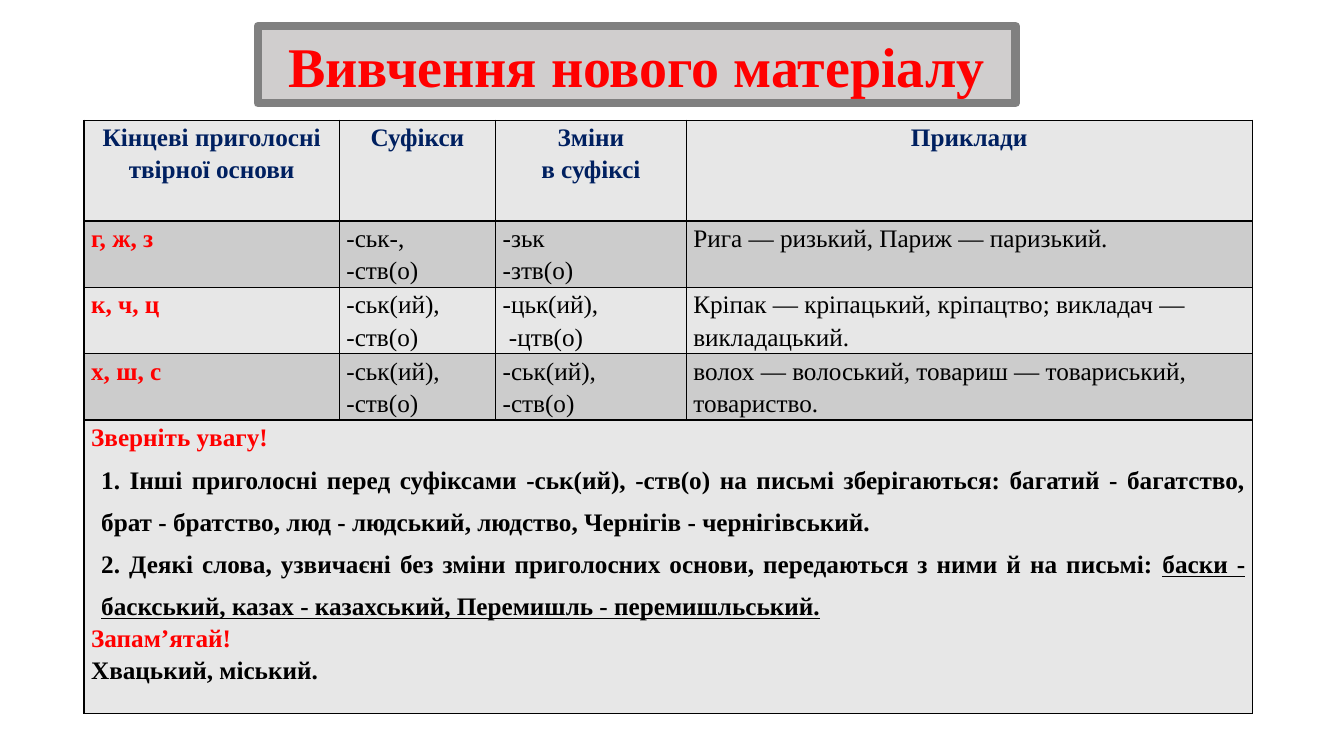
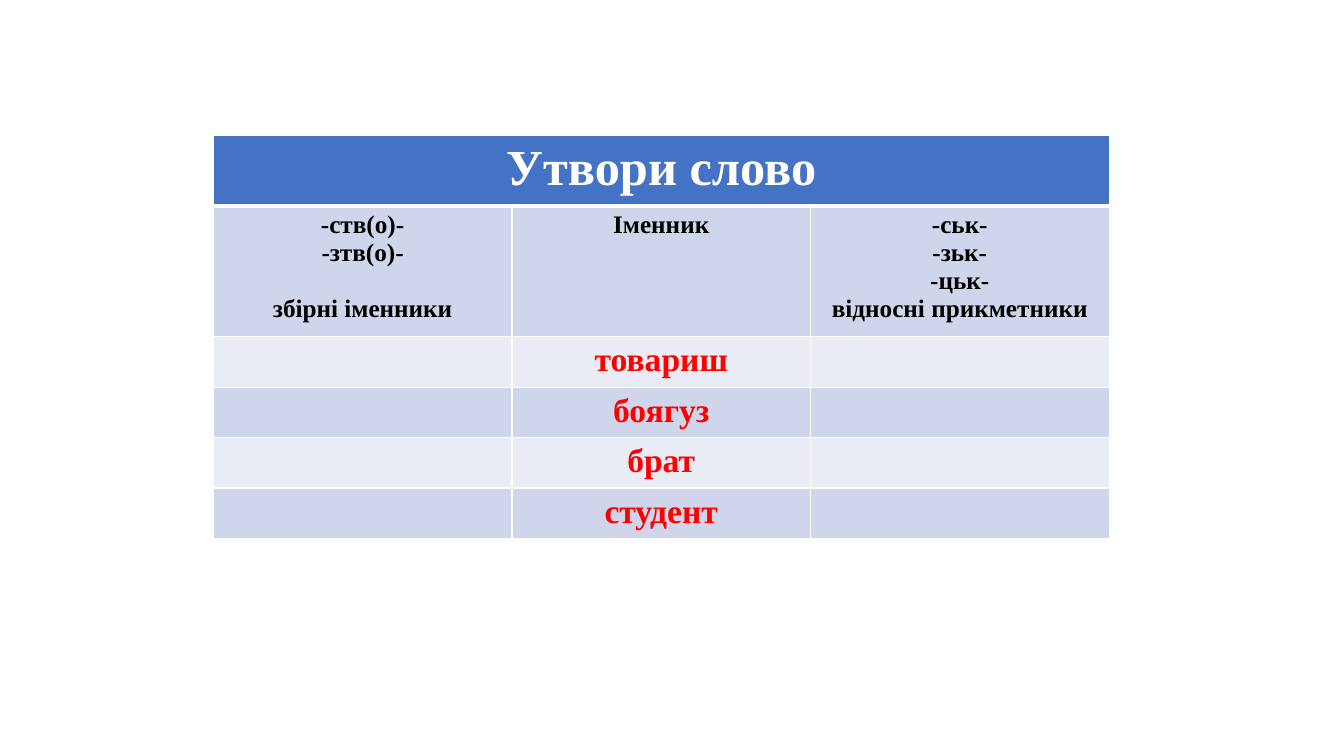
from dataclasses import dataclass, replace
from typing import Optional

from lxml.etree import SubElement
from pptx import Presentation
from pptx.dml.color import RGBColor
from pptx.enum.shapes import MSO_SHAPE as Shape
from pptx.enum.text import MSO_ANCHOR as Anchor, PP_ALIGN as Align
from pptx.oxml.ns import qn
from pptx.util import Inches, Pt

UNIT = Inches(1 / 12)
COLS, ROWS = 160, 90
FONT = "Times New Roman"
COLORS = {
    "red": "FF0000", "navy": "002060", "black": "000000", "white": "FFFFFF",
    "panel": "D0CECE", "frame": "808080", "light": "E7E7E7", "dark": "CCCCCC",
    "blue": "4472C4", "blue_mid": "CFD5EA", "blue_pale": "E9EBF5",
}


@dataclass(frozen=True)
class Para:
    """A paragraph with one style and an optional underlined ending."""
    text: str
    color: str = "black"
    size: float = 18
    bold: bool = True
    align: Align = Align.LEFT
    spacing: float = 1.15
    before: float = 0
    indent: float = 0
    underlined: str = ""


@dataclass(frozen=True)
class Row:
    """A table row: height in grid rows, fill colour and cells."""
    height: float
    fill: str
    cells: list[list[Para]]
    merged: bool = False
    rule: float = 1


@dataclass(frozen=True)
class Grid:
    """A table placed on the slide grid."""
    left: float
    top: float
    widths: list[float]
    rows: list[Row]
    border: str
    margins: Optional[tuple[float, float]] = None


def units(n: float) -> int:
    """Convert grid steps to a length."""
    return round(n * UNIT)


def rgb(name: str) -> RGBColor:
    """Look up a colour by name."""
    return RGBColor.from_string(COLORS[name])


def write(tf, paras: list[Para]) -> None:
    """Fill a text frame with paragraphs."""
    for i, para in enumerate(paras):
        p = tf.paragraphs[0] if i == 0 else tf.add_paragraph()
        p.add_run().text = para.text
        if para.underlined:
            r = p.add_run()
            r.text = para.underlined
            r.font.underline = True
        p.alignment = para.align
        p.line_spacing = para.spacing
        p.space_before = Pt(para.before)
        if para.indent:
            p._p.get_or_add_pPr().set("marL", str(units(para.indent)))
        f = p.font
        f.name, f.size, f.bold = FONT, Pt(para.size), para.bold
        f.color.rgb = rgb(para.color)


def set_borders(cell, color: str, bottom: float, top: float) -> None:
    """Draw the four borders of a cell."""
    tc_pr = cell._tc.get_or_add_tcPr()
    for side, width in (("L", 1), ("R", 1), ("T", top), ("B", bottom)):
        ln = SubElement(tc_pr, qn(f"a:ln{side}"), w=str(Pt(width)))
        fill = SubElement(ln, qn("a:solidFill"))
        SubElement(fill, qn("a:srgbClr"), val=COLORS[color])


def draw_table(s, grid: Grid) -> None:
    """Draw a table from its grid description."""
    height = sum(row.height for row in grid.rows)
    frame = s.shapes.add_table(
        len(grid.rows), len(grid.widths), units(grid.left), units(grid.top),
        units(sum(grid.widths)), units(height))
    table = frame.table
    table.first_row = table.horz_banding = False
    for column, width in zip(table.columns, grid.widths):
        column.width = units(width)
    top = 1
    for i, row in enumerate(grid.rows):
        table.rows[i].height = units(row.height)
        for cell in table.rows[i].cells:
            set_borders(cell, grid.border, row.rule, top)
            cell.fill.solid()
            cell.fill.fore_color.rgb = rgb(row.fill)
            if grid.margins:
                side, edge = map(units, grid.margins)
                cell.margin_left = cell.margin_right = side
                cell.margin_top = cell.margin_bottom = edge
        if row.merged:
            table.cell(i, 0).merge(table.cell(i, len(grid.widths) - 1))
        for j, paras in enumerate(row.cells):
            write(table.cell(i, j).text_frame, paras)
        top = row.rule


def draw_title(s, text: str) -> None:
    """Draw the framed slide title."""
    sp = s.shapes.add_shape(Shape.RECTANGLE, units(30.7), units(3.1), units(90.2), units(9.2))
    sp.shadow.inherit = False
    sp.fill.solid()
    sp.fill.fore_color.rgb = rgb("panel")
    sp.line.color.rgb = rgb("frame")
    sp.line.width = Pt(6)
    tf = sp.text_frame
    tf.word_wrap = True
    tf.vertical_anchor = Anchor.MIDDLE
    write(tf, [Para(text, "red", 40, align=Align.CENTER, spacing=1)])


def centered(*lines: str, color: str = "black", size: float = 18, spacing: float = 1) -> list[Para]:
    """Make centred bold paragraphs."""
    return [Para(t, color, size, align=Align.CENTER, spacing=spacing) for t in lines]


def plain(*lines: str) -> list[Para]:
    """Make regular-weight paragraphs."""
    return [Para(t, bold=False) for t in lines]


def rule_row(fill: str, letters: str, suffixes: list[Para], changes: list[Para], examples: str) -> Row:
    """Make one row of the consonant rules."""
    return Row(7.9, fill, [[Para(letters, "red")], suffixes, changes, plain(examples)])


def rules_table() -> Grid:
    """Describe the table of suffix rules."""
    heads = [("Кінцеві приголосні твірної основи",), ("Суфікси",),
             ("Зміни", "в суфіксі"), ("Приклади",)]
    both = "-ськ(ий), -ств(о)"
    note = Para("", align=Align.JUSTIFY, spacing=1.5, before=0.5, indent=1.2)
    notes = [
        Para("Зверніть увагу!", "red"),
        replace(note, text="1. Інші приголосні перед суфіксами -ськ(ий), -ств(о) на письмі "
                "зберігаються: багатий - багатство, брат - братство, люд - людський, "
                "людство, Чернігів - чернігівський."),
        replace(note, text="2. Деякі слова, узвичаєні без зміни приголосних основи, "
                "передаються з ними й на письмі: ",
                underlined="баски - баскський, казах - казахський, "
                "Перемишль - перемишльський."),
        Para("Запам’ятай!", "red"),
        Para("Хвацький, міський."),
    ]
    shifted = Para("-цтв(о)", bold=False, indent=0.75)
    rows = [
        Row(12, "light", [centered(*h, color="navy", spacing=1.15) for h in heads]),
        rule_row("dark", "г, ж, з", plain("-ськ-,", "-ств(о)"), plain("-зьк", "-зтв(о)"),
                 "Рига — ризький, Париж — паризький."),
        rule_row("light", "к, ч, ц", plain(both), plain("-цьк(ий),") + [shifted],
                 "Кріпак — кріпацький, кріпацтво; викладач — викладацький."),
        rule_row("dark", "х, ш, с", plain(both), plain("-ськ(ий),", "-ств(о)"),
                 "волох — волоський, товариш — товариський, товариство."),
        Row(34.9, "light", [notes], merged=True),
    ]
    return Grid(10, 14.3, [30.4, 18.6, 22.7, 67.4], rows, "black", (0.85, 0))


def words_table() -> Grid:
    """Describe the word-building exercise."""
    nouns = centered("-ств(о)-", "-зтв(о)-", "збірні іменники")
    nouns[-1] = replace(nouns[-1], before=20.5)
    adjectives = centered("-ськ-", "-зьк-", "-цьк-", "відносні прикметники")
    words = ["товариш", "боягуз", "брат", "студент"]
    rows = [
        Row(8.4, "blue", [centered("Утвори слово", color="white", size=36)], merged=True, rule=3),
        Row(15.6, "blue_mid", [nouns, centered("Іменник"), adjectives]),
    ]
    rows += [Row(6, ("blue_pale", "blue_mid")[i % 2],
                 [[], centered(word, color="red", size=24), []])
             for i, word in enumerate(words)]
    return Grid(25.4, 16.1, [35.55] * 3, rows, "white")


def main() -> None:
    """Build the presentation."""
    prs = Presentation()
    prs.slide_width, prs.slide_height = units(COLS), units(ROWS)
    blank = prs.slide_layouts[6]
    s = prs.slides.add_slide(blank)
    draw_title(s, "Вивчення нового матеріалу")
    draw_table(s, rules_table())
    draw_table(prs.slides.add_slide(blank), words_table())
    prs.save("out.pptx")


if __name__ == "__main__":
    main()
